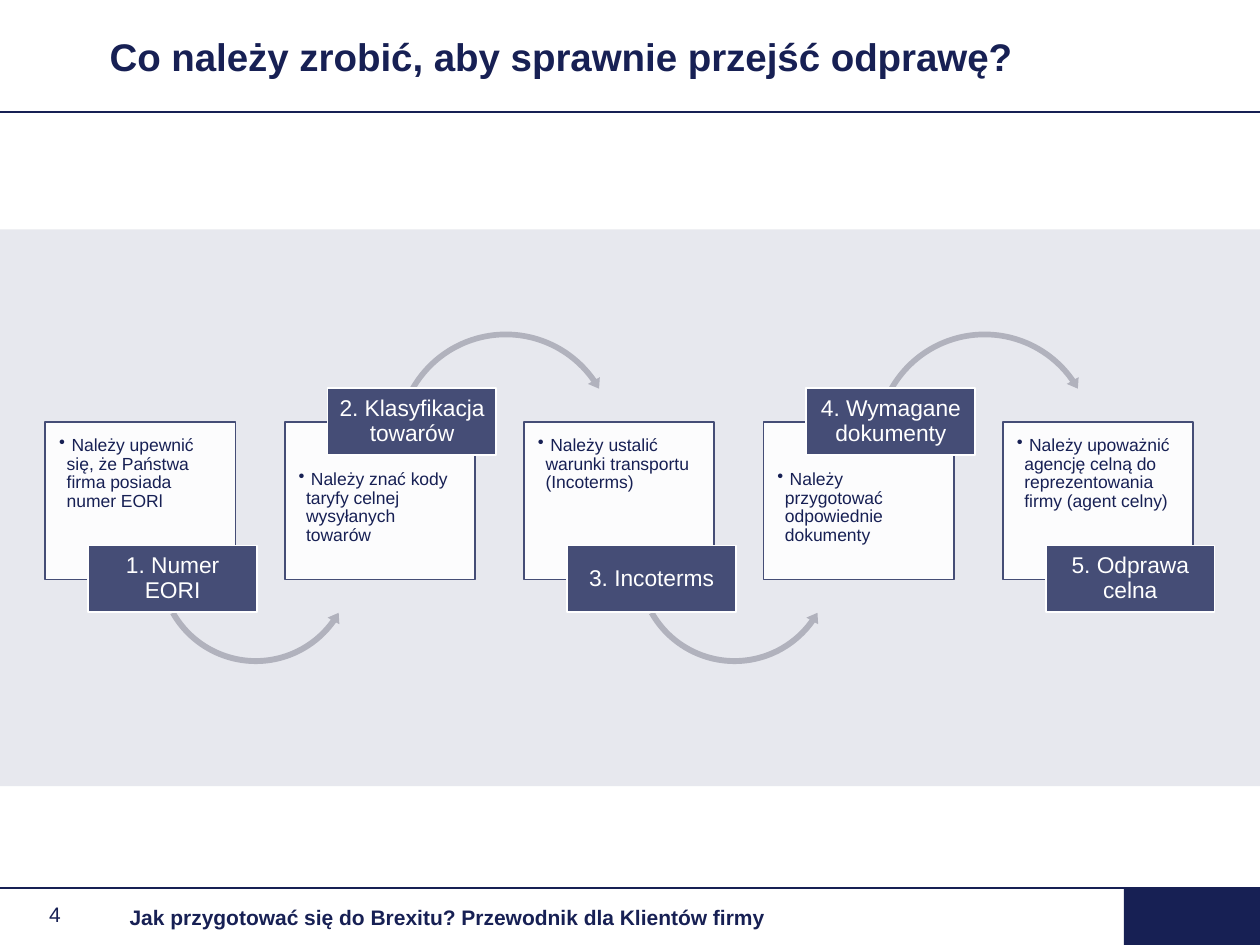
from pptx import Presentation
from pptx.util import Inches, Pt
from pptx.dml.color import RGBColor as Rgb
from pptx.enum.shapes import MSO_SHAPE as Kind, MSO_CONNECTOR as Link
from pptx.enum.text import MSO_ANCHOR as Anchor, PP_ALIGN as Align
from pptx.oxml.ns import qn
from lxml.etree import SubElement as Sub

ink = {"navy": "172054", "band": "E7E8EE", "slate": "454D76",
       "arrow": "B1B2BD", "white": "FFFFFF"}
deck = Presentation()
deck.slide_width, deck.slide_height = Inches(10), Inches(7.5)
cell = deck.slide_width / 100
slide = deck.slides.add_slide(deck.slide_layouts[6])
items = slide.shapes


def shape(kind, area, fill, edge=None):
    item = items.add_shape(kind, *[round(n * cell) for n in area])
    item.shadow.inherit = False
    item.fill.solid()
    item.fill.fore_color.rgb = Rgb.from_string(ink[fill])
    if edge:
        item.line.color.rgb = Rgb.from_string(ink[edge])
        item.line.width = Pt(1)
    else:
        item.line.fill.background()
    return item


def write(item, text, size, hue, pads, anchor=Anchor.MIDDLE, bold=False):
    frame = item.text_frame
    frame.word_wrap = True
    frame.vertical_anchor = anchor
    (frame.margin_left, frame.margin_top,
     frame.margin_right, frame.margin_bottom) = [round(n * cell) for n in pads]
    para = frame.paragraphs[0]
    para.text = text
    para.alignment = Align.LEFT
    para.font.name = "Arial"
    para.font.size = Pt(size)
    para.font.bold = bold
    para.font.color.rgb = Rgb.from_string(ink[hue])
    return para


for row in (8.9, 70.5):
    y = round(row * cell)
    rule = items.add_connector(Link.STRAIGHT, 0, y, deck.slide_width, y)
    rule.line.color.rgb = Rgb.from_string(ink["navy"])
    rule.line.width = Pt(1)
    Sub(rule.line._get_or_add_ln().getparent(), qn("a:effectLst"))

shape(Kind.RECTANGLE, (89.2, 70.5, 10.8, 4.5), "navy")
shape(Kind.RECTANGLE, (0, 18.2, 100, 44.2), "band")

steps = [
    ("1. Numer EORI", "Należy upewnić się, że Państwa firma posiada numer EORl"),
    ("2. Klasyfikacja towarów", "Należy znać kody taryfy celnej wysyłanych towarów"),
    ("3. Incoterms", "Należy ustalić warunki transportu (Incoterms)"),
    ("4. Wymagane dokumenty", "Należy przygotować odpowiednie dokumenty"),
    ("5. Odprawa celna", "Należy upoważnić agencję celną do reprezentowania firmy (agent celny)"),
]
low = (Kind.LEFT_CIRCULAR_ARROW, 8.6, 36.8, 16.2, (0.029, 3.485, 21.24, 90.245, 0.033))
high = (Kind.CIRCULAR_ARROW, 8.5, 26, 18.1, (0.025, 3.092, 195.153, 125.755, 0.03))

for i, (name, note) in enumerate(steps):
    x, up = 3.6 + 19 * i, i % 2
    card = shape(Kind.RECTANGLE, (x, 33.5, 15.1, 12.5), "white", "slate")
    tint = card.fill._xPr.find(qn("a:solidFill"))[0]
    Sub(tint, qn("a:alpha"), val="90000")
    para = write(card, " " + note, 10, "navy",
                 (1.1, 3.8 if up else 1.1, 1.1, 0.8), Anchor.TOP)
    para.line_spacing = 0.9
    props = para._p.get_or_add_pPr()
    props.set("marL", str(round(0.6 * cell)))
    props.set("indent", str(round(-0.6 * cell)))
    dot = Sub(props, qn("a:buChar"), char="•")
    props.find(qn("a:defRPr")).addprevious(dot)

    if i < len(steps) - 1:
        kind, dx, top, side, turns = high if up else low
        arc = shape(kind, (x + dx, top, side, side), "arrow")
        for k, turn in enumerate(turns):
            arc.adjustments[k] = turn

    tag = shape(Kind.RECTANGLE, (x + 3.4, 30.8 if up else 43.3, 13.4, 5.3),
                "slate", "white")
    para = write(tag, name, 13, "white", (0.8,) * 4)
    para.alignment = Align.CENTER
    para.line_spacing = 0.9

words = [
    ("4", (3.9, 71.3, 5.4, 2.5), 12, 0, False),
    ("Jak przygotować się do Brexitu? Przewodnik dla Klientów firmy",
     (9.3, 71.5, 59.5, 2.5), 12, 1, True),
    ("Co należy zrobić, aby sprawnie przejść odprawę?",
     (8.7, 2.1, 91.3, 4.7), 22, 0, True),
]
for text, area, size, pad, bold in words:
    item = items.add_textbox(*[round(n * cell) for n in area])
    write(item, text, size, "navy", (pad, 0.5, 1, 0.5), bold=bold)

deck.save("out.pptx")
